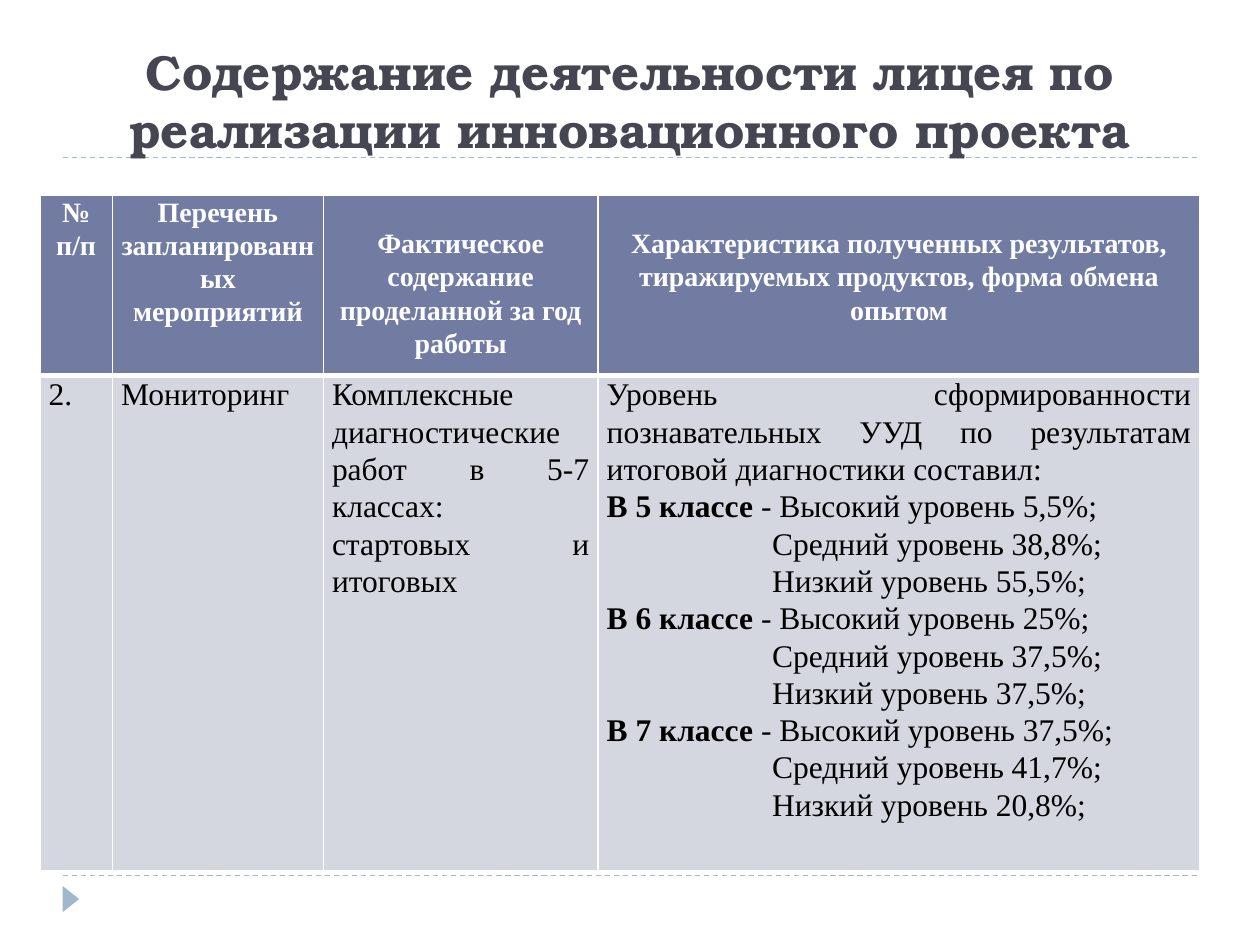
from lxml import etree
from pptx import Presentation
from pptx.dml.color import RGBColor
from pptx.enum import dml, shapes, text
from pptx.oxml import ns
from pptx.util import Pt

WHITE = RGBColor(0xFF, 0xFF, 0xFF)
BLACK = RGBColor(0, 0, 0)
TITLE_GREY = RGBColor(0x46, 0x46, 0x53)
ACCENT = RGBColor(0x9F, 0xB8, 0xCD)
HEADER_FILL = RGBColor(0x72, 0x7C, 0xA3)
BODY_FILL = RGBColor(0xD5, 0xD7, 0xE0)

TITLE = "Содержание деятельности лицея по реализации инновационного проекта"
HEADERS = [  # paragraphs, top margin
    (["№", "п/п"], 0),
    (["Перечень", "запланированных мероприятий"], 0),
    (["Фактическое содержание проделанной за год работы"], 18),
    (["Характеристика полученных результатов, тиражируемых продуктов, "
      "форма обмена опытом"], 18),
]
ACTIVITY = [
    "2.",
    "Мониторинг",
    "Комплексные диагностические работ в 5-7 классах: стартовых и итоговых",
    "Уровень сформированности познавательных УУД по результатам итоговой "
    "диагностики составил:",
]
LEVELS = ["Высокий", "Средний", "Низкий"]
RESULTS = {
    "В 5 классе": ["5,5%", "38,8%", "55,5%"],
    "В 6 классе": ["25%", "37,5%", "37,5%"],
    "В 7 классе": ["37,5%", "41,7%", "20,8%"],
}

COLUMN_WIDTHS = [41.5, 120.5, 157, 344]
ROW_HEIGHTS = [103, 283]
LEVEL_INDENT = 94.5
RULE_YS = [500.5, 90]

TITLE_FONT = dict(name="TeX Gyre Bonum", size=Pt(28), bold=True)
HEADER_FONT = dict(name="Times New Roman", size=Pt(16), bold=True)
BODY_FONT = dict(name="Times New Roman", size=Pt(18), bold=False)
CENTER, JUSTIFY, LEFT = (text.PP_ALIGN.CENTER, text.PP_ALIGN.JUSTIFY,
                         text.PP_ALIGN.LEFT)


def add_run(paragraph, words, formats, color):
    run = paragraph.add_run()
    run.text = words
    for key, value in formats.items():
        setattr(run.font, key, value)
    run.font.color.rgb = color


def next_paragraph(frame, align):
    """Use the first paragraph while it is empty, then append new ones."""
    first = frame.paragraphs[0]
    paragraph = frame.add_paragraph() if first.runs else first
    paragraph.alignment = align
    paragraph.line_spacing = 1.07
    return paragraph


def style_cell(cell, fill, top_border, bottom_border, top_margin=0):
    margins = dict(margin_left=Pt(5), margin_right=Pt(5),
                   margin_top=Pt(top_margin), margin_bottom=0)
    for key, value in margins.items():
        setattr(cell, key, value)
    properties = cell._tc.get_or_add_tcPr()
    widths = dict(lnL=1, lnR=1, lnT=top_border, lnB=bottom_border)
    for side, width in widths.items():
        border = etree.SubElement(properties, ns.qn(f"a:{side}"), w=str(Pt(width)))
        solid = etree.SubElement(border, ns.qn("a:solidFill"))
        etree.SubElement(solid, ns.qn("a:srgbClr"), val=str(WHITE))
    cell.fill.solid()
    cell.fill.fore_color.rgb = fill


def add_rule(slide, y):
    rule = slide.shapes.add_connector(shapes.MSO_CONNECTOR.STRAIGHT,
                                      Pt(36), Pt(y), Pt(684), Pt(y))
    rule.line.color.rgb = ACCENT
    rule.line.width = Pt(0.75)
    rule.line.dash_style = dml.MSO_LINE.DASH
    etree.SubElement(rule._element.spPr, ns.qn("a:effectLst"))


def add_marker(slide):
    marker = slide.shapes.add_shape(shapes.MSO_SHAPE.ISOSCELES_TRIANGLE,
                                    Pt(33), Pt(509), Pt(15), Pt(9.5))
    marker.rotation = 90
    marker.shadow.inherit = False
    marker.fill.solid()
    marker.fill.fore_color.rgb = ACCENT
    marker.line.fill.background()


def add_title(slide):
    frame = slide.shapes.add_textbox(Pt(36), Pt(12.25), Pt(648), Pt(82)).text_frame
    frame.word_wrap = True
    frame.vertical_anchor = text.MSO_ANCHOR.BOTTOM
    frame.paragraphs[0].alignment = CENTER
    add_run(frame.paragraphs[0], TITLE, TITLE_FONT, TITLE_GREY)


def add_results(frame):
    for grade, shares in RESULTS.items():
        for place, (level, share) in enumerate(zip(LEVELS, shares)):
            paragraph = next_paragraph(frame, LEFT)
            words = f"{level} уровень {share};"
            if place == 0:
                add_run(paragraph, f"{grade} ", BODY_FONT | {"bold": True}, BLACK)
                words = f"- {words}"
            else:
                paragraph._p.get_or_add_pPr().set("marL", str(Pt(LEVEL_INDENT)))
            add_run(paragraph, words, BODY_FONT, BLACK)


def add_activity_table(slide):
    table = slide.shapes.add_table(
        len(ROW_HEIGHTS), len(COLUMN_WIDTHS), Pt(22.75), Pt(111.5),
        Pt(sum(COLUMN_WIDTHS)), Pt(sum(ROW_HEIGHTS))).table
    for column, width in zip(table.columns, COLUMN_WIDTHS):
        column.width = Pt(width)
    for row, height in zip(table.rows, ROW_HEIGHTS):
        row.height = Pt(height)
    for index, ((lines, top_margin), words) in enumerate(zip(HEADERS, ACTIVITY)):
        header, body = table.cell(0, index), table.cell(1, index)
        style_cell(header, HEADER_FILL, 1, 3, top_margin)
        style_cell(body, BODY_FILL, 3, 1)
        for line in lines:
            add_run(next_paragraph(header.text_frame, CENTER), line,
                    HEADER_FONT, WHITE)
        add_run(next_paragraph(body.text_frame, JUSTIFY), words, BODY_FONT, BLACK)
    add_results(table.cell(1, len(ACTIVITY) - 1).text_frame)


def main():
    deck = Presentation()
    deck.slide_width, deck.slide_height = Pt(720), Pt(540)
    slide = deck.slides.add_slide(deck.slide_layouts[6])
    for y in RULE_YS:
        add_rule(slide, y)
    add_marker(slide)
    add_title(slide)
    add_activity_table(slide)
    deck.save("out.pptx")


if __name__ == "__main__":
    main()
